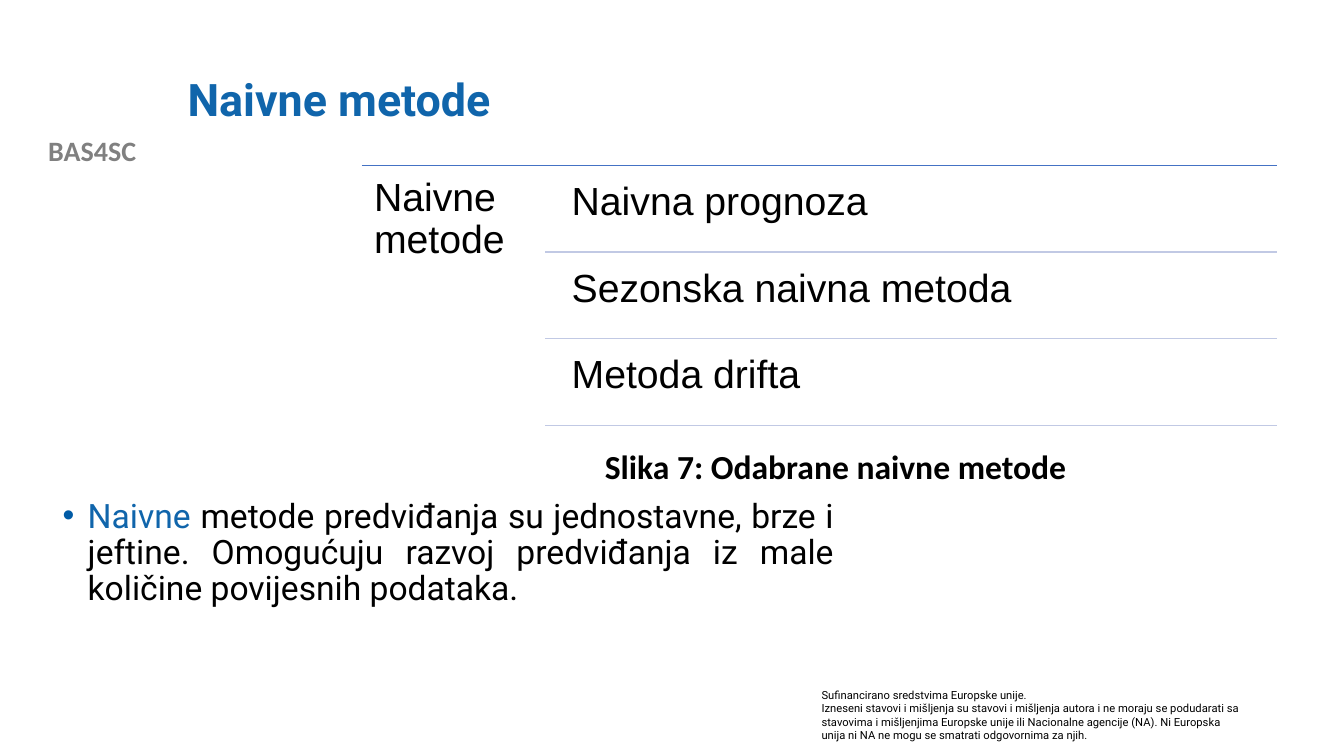
from dataclasses import dataclass

from lxml import etree
from pptx import Presentation
from pptx import util as u
from pptx.dml.color import RGBColor
from pptx.enum import text as t
from pptx.enum.shapes import MSO_CONNECTOR
from pptx.oxml.ns import qn

EMU_PER_PX = 9144
BLUE = RGBColor(0x10, 0x65, 0xAB)
BULLET_BLUE = RGBColor(0x01, 0x5B, 0xA6)
GRAY = RGBColor(0x80, 0x80, 0x80)
BLACK = RGBColor(0, 0, 0)
HEAD_RULE = RGBColor(0x44, 0x72, 0xC4)
ROW_RULE = RGBColor(0xC1, 0xC9, 0xE4)

METHODS = ("Naivna prognoza", "Sezonska naivna metoda", "Metoda drifta")
DIAGRAM_LEFT, DIAGRAM_TOP, DIAGRAM_RIGHT = 359, 164, 1267
ROW_LEFT, ROW_PITCH = 541, 86


@dataclass(frozen=True)
class Box:
    left: int
    top: int
    width: int
    height: int


@dataclass(frozen=True)
class Style:
    font: str
    size: int
    color: RGBColor = BLACK
    bold: bool = False


@dataclass(frozen=True)
class Label:
    box: Box
    paragraphs: tuple[str, ...]
    style: Style
    align: t.PP_ALIGN = t.PP_ALIGN.LEFT
    spacing: float = 1.0
    inset: tuple[int, int] = (10, 5)


def px(value: int) -> u.Emu:
    return u.Emu(value * EMU_PER_PX)


def place(shape, box: Box) -> None:
    shape.left, shape.top = px(box.left), px(box.top)
    shape.width, shape.height = px(box.width), px(box.height)


def add_run(paragraph, words: str, style: Style) -> None:
    run = paragraph.add_run()
    run.text = words
    run.font.name = style.font
    run.font.size = u.Pt(style.size)
    run.font.bold = style.bold
    run.font.color.rgb = style.color


def add_label(slide, label: Label) -> None:
    box = label.box
    frame = slide.shapes.add_textbox(
        px(box.left), px(box.top), px(box.width), px(box.height)
    ).text_frame
    frame.word_wrap = True
    frame.margin_left = frame.margin_right = px(label.inset[0])
    frame.margin_top = frame.margin_bottom = px(label.inset[1])
    for index, words in enumerate(label.paragraphs):
        paragraph = frame.add_paragraph() if index else frame.paragraphs[0]
        paragraph.alignment = label.align
        paragraph.line_spacing = label.spacing
        add_run(paragraph, words, label.style)


def add_rule(slide, left: int, top: int, color: RGBColor) -> None:
    rule = slide.shapes.add_connector(
        MSO_CONNECTOR.STRAIGHT, px(left), px(top), px(DIAGRAM_RIGHT), px(top)
    )
    rule.line.color.rgb = color
    rule.line.width = u.Pt(1)
    etree.SubElement(rule._element.spPr, qn("a:effectLst"))


def add_bullet(paragraph, color: RGBColor) -> None:
    properties = paragraph._p.get_or_add_pPr()
    properties.set("marL", str(px(25)))
    properties.set("indent", str(-px(25)))
    bullet_color = etree.SubElement(properties, qn("a:buClr"))
    etree.SubElement(bullet_color, qn("a:srgbClr"), val=str(color))
    etree.SubElement(properties, qn("a:buFont"), typeface="Arial")
    etree.SubElement(properties, qn("a:buChar"), char="•")


def fill_title(title) -> None:
    place(title, Box(176, 40, 1066, 122))
    frame = title.text_frame
    frame.auto_size = t.MSO_AUTO_SIZE.NONE
    frame.vertical_anchor = t.MSO_ANCHOR.MIDDLE
    paragraph = frame.paragraphs[0]
    paragraph.alignment = t.PP_ALIGN.LEFT
    paragraph.line_spacing = 0.9
    add_run(paragraph, "Naivne metode", Style("Roboto", 32, BLUE, True))


def fill_body(body) -> None:
    place(body, Box(52, 490, 785, 220))
    frame = body.text_frame
    frame.auto_size = t.MSO_AUTO_SIZE.NONE
    paragraph = frame.paragraphs[0]
    add_bullet(paragraph, BULLET_BLUE)
    paragraph.alignment = t.PP_ALIGN.JUSTIFY
    paragraph.line_spacing = 0.9
    paragraph.space_before = u.Pt(0)
    add_run(paragraph, "Naivne ", Style("Roboto", 24, BLUE))
    add_run(
        paragraph,
        "metode predviđanja su jednostavne, brze i jeftine. "
        "Omogućuju razvoj predviđanja iz male količine povijesnih podataka.",
        Style("Roboto", 24),
    )


def add_diagram(slide) -> None:
    entry = Style("Arial", 28)
    add_rule(slide, DIAGRAM_LEFT, DIAGRAM_TOP, HEAD_RULE)
    heading = Box(DIAGRAM_LEFT, DIAGRAM_TOP, ROW_LEFT - DIAGRAM_LEFT, 261)
    add_label(slide, Label(heading, ("Naivne metode",), entry, spacing=0.9, inset=(12, 12)))
    for row, method in enumerate(METHODS):
        top = DIAGRAM_TOP + row * ROW_PITCH
        box = Box(ROW_LEFT + 14, top + 4, 712, 81)
        add_label(slide, Label(box, (method,), entry, spacing=0.9, inset=(12, 12)))
        add_rule(slide, ROW_LEFT, top + ROW_PITCH, ROW_RULE)


LABELS = (
    Label(Box(0, 128, 183, 44), ("BAS4SC",),
          Style("Calibri", 20, GRAY, True), t.PP_ALIGN.CENTER),
    Label(Box(805, 678, 437, 64), (
        "Sufinancirano sredstvima Europske unije.",
        "Izneseni stavovi i mišljenja su stavovi i mišljenja autora i ne moraju se "
        "podudarati sa stavovima i mišljenjima Europske unije ili Nacionalne agencije "
        "(NA). Ni Europska unija ni NA ne mogu se smatrati odgovornima za njih.",
    ), Style("Roboto", 8)),
    Label(Box(590, 437, 586, 50), ("Slika 7: Odabrane naivne metode",),
          Style("Calibri", 24, bold=True)),
)


def main() -> None:
    deck = Presentation()
    deck.slide_width, deck.slide_height = px(1333), px(750)
    slide = deck.slides.add_slide(deck.slide_layouts[1])
    fill_title(slide.shapes.title)
    fill_body(slide.placeholders[1])
    for label in LABELS:
        add_label(slide, label)
    add_diagram(slide)
    deck.save("out.pptx")


if __name__ == "__main__":
    main()
